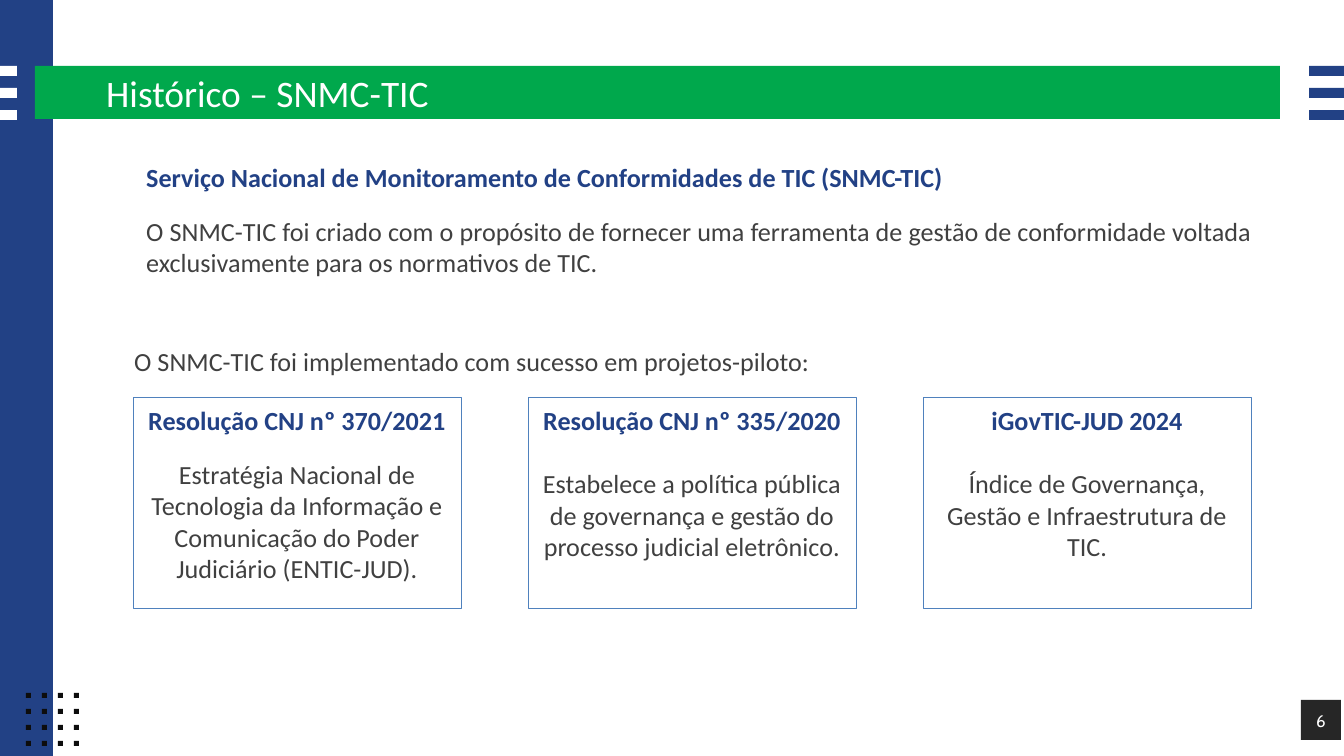
from pptx import Presentation, util as u
from pptx.dml.color import RGBColor
from pptx.enum import shapes, text

WIDTH, HEIGHT = 1344, 756
SCALE = u.Inches(10) / WIDTH
COLORS = {
    "blue": "224185",
    "green": "00A84C",
    "white": "FFFFFF",
    "dot": "0D0D0D",
    "dark": "262626",
    "body": "404040",
    "border": "4F81BD",
}
ALIGN = text.PP_ALIGN
ANCHOR = text.MSO_ANCHOR


def px(length):
    return u.Emu(round(length * SCALE))


def color(name):
    return RGBColor.from_string(COLORS[name])


class SlideBuilder:
    font = "Calibri"
    size = 14

    def __init__(self, slide):
        self.slide = slide

    def rect(self, left, top, width, height, fill=None, line=None):
        box = self.slide.shapes.add_shape(
            shapes.MSO_SHAPE.RECTANGLE, *map(px, (left, top, width, height)))
        box.shadow.inherit = False
        if fill:
            box.fill.solid()
            box.fill.fore_color.rgb = color(fill)
        else:
            box.fill.background()
        if line:
            box.line.color.rgb = color(line)
            box.line.width = u.Pt(0.5)
        else:
            box.line.fill.background()
        return box

    def set_text(self, box, lines, align=ALIGN.LEFT, anchor=ANCHOR.TOP,
                 gap=0, size=size, font=font):
        frame = box.text_frame
        frame.word_wrap = True
        frame.vertical_anchor = anchor
        for index, (words, ink, bold) in enumerate(lines):
            para = frame.add_paragraph() if index else frame.paragraphs[0]
            para.text = words
            para.alignment = align
            para.space_after = u.Pt(gap)
            para.font.name = font
            para.font.size = u.Pt(size)
            para.font.bold = bold
            para.font.color.rgb = color(ink)
        return frame

    def label(self, left, top, width, height, lines, **style):
        box = self.slide.shapes.add_textbox(*map(px, (left, top, width, height)))
        return self.set_text(box, lines, **style)

    def card(self, left, top, width, height, heading, body, gap):
        box = self.rect(left, top, width, height, line="border")
        lines = [(heading, "blue", True), (body, "body", False)]
        self.set_text(box, lines, align=ALIGN.CENTER, gap=gap)


def main():
    deck = Presentation()
    deck.slide_width, deck.slide_height = px(WIDTH), px(HEIGHT)
    page = SlideBuilder(deck.slides.add_slide(deck.slide_layouts[6]))

    page.rect(0, 0, 53, HEIGHT, "blue")
    page.rect(35, 66, 1245, 53, "green")
    for left, width, fill in ((0, 17, "white"), (1309, 35, "blue")):
        for row in range(3):
            page.rect(left, 66 + 22 * row, width, 10, fill)
    for row in range(4):
        for column in range(4):
            page.rect(26 + 16 * column, 693 + 16 * row, 5, 5, "dot")
    page.rect(1301, 700, 40, 40, "dark")

    page.label(93, 65, 1159, 56, [("Histórico – SNMC-TIC", "white", False)],
               anchor=ANCHOR.MIDDLE, size=20)
    number = page.label(1301, 702, 40, 37, [("6", "white", False)], align=ALIGN.CENTER,
                        anchor=ANCHOR.MIDDLE, size=9, font="Cabin")
    number.margin_left = number.margin_right = 0
    number.margin_top = number.margin_bottom = 0

    page.label(133, 155, 1133, 132, [
        ("Serviço Nacional de Monitoramento de Conformidades de TIC (SNMC-TIC)",
         "blue", True),
        ("O SNMC-TIC foi criado com o propósito de fornecer uma ferramenta de gestão "
         "de conformidade voltada exclusivamente para os normativos de TIC.",
         "body", False),
    ], align=ALIGN.JUSTIFY, gap=12)
    page.label(121, 339, 902, 46, [
        ("O SNMC-TIC foi implementado com sucesso em projetos-piloto:", "body", False),
    ], align=ALIGN.JUSTIFY, gap=12)

    cards = [
        ("Resolução CNJ nº 370/2021",
         "Estratégia Nacional de Tecnologia da Informação e Comunicação "
         "do Poder Judiciário (ENTIC-JUD).", 12),
        ("Resolução CNJ nº 335/2020",
         "Estabelece a política pública de governança e gestão "
         "do processo judicial eletrônico.", 17),
        ("iGovTIC-JUD 2024",
         "Índice de Governança, Gestão e Infraestrutura de TIC.", 17),
    ]
    for column, (heading, body, gap) in enumerate(cards):
        page.card(133 + 395 * column, 398, 328, 211, heading, body, gap)

    deck.save("out.pptx")


if __name__ == "__main__":
    main()
